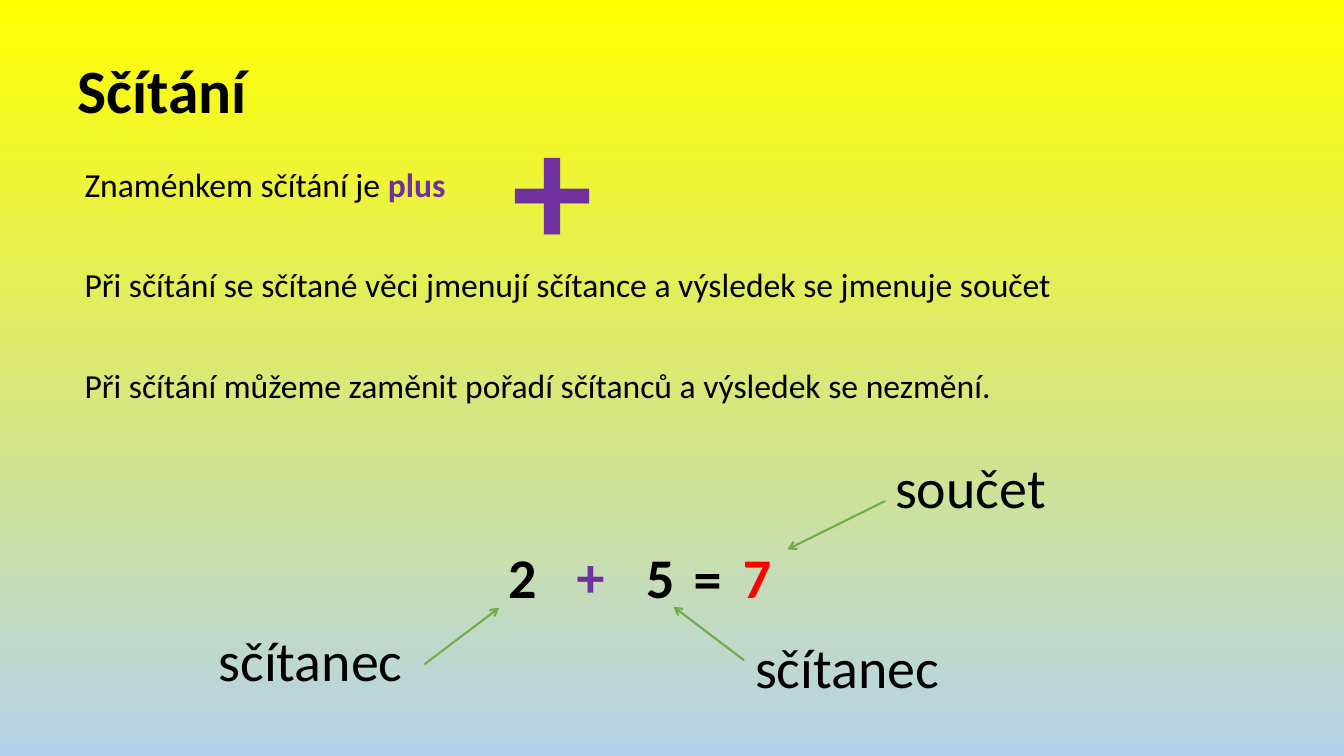
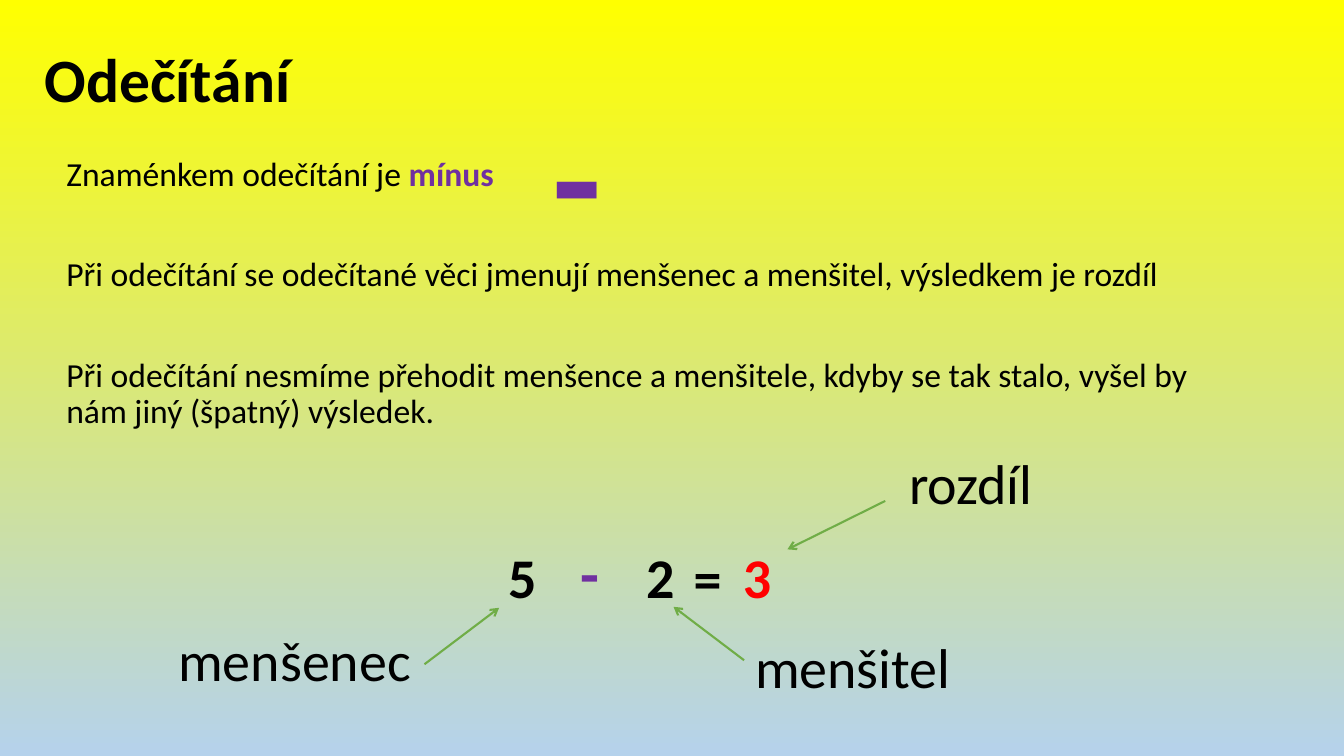
from dataclasses import dataclass

import pptx
import pptx.dml.color
import pptx.enum.shapes
import pptx.enum.text
import pptx.oxml
import pptx.oxml.ns
import pptx.slide
import pptx.text.text
import pptx.util

Inches = pptx.util.Inches
Pt = pptx.util.Pt

FONT = "Calibri"
COLORS = {
    "text": "000000",
    "sign": "7030A0",
    "result": "FF0000",
    "arrow": "70AD47",
    "sky_top": "FFFF00",
    "sky_bottom": "B5D2EC",
}


@dataclass(frozen=True)
class Label:
    text: str
    left: float
    top: float
    width: float = 0.59
    height: float = 0.77
    size: float = 40
    color: str = "text"
    bold: bool = False


@dataclass(frozen=True)
class Arrow:
    start: tuple[float, float]
    end: tuple[float, float]


@dataclass(frozen=True)
class Operation:
    title: str
    title_at: tuple[float, float]
    rules_at: tuple[float, float]
    rules_height: float
    sign_intro: str
    sign_name: str
    rules: tuple[str, ...]
    numbers: tuple[str, str, str]
    signs: tuple[Label, ...]
    terms: tuple[Label, ...]


# Arrows from each term to its number, the same for both operations
ARROWS = (
    Arrow((4.21, 6.59), (4.95, 6.03)),
    Arrow((7.38, 6.55), (6.68, 6.02)),
    Arrow((8.78, 4.97), (7.81, 5.45)),
)

OPERATIONS = (
    Operation(
        title="Sčítání",
        title_at=(0.67, 0.2),
        rules_at=(0.74, 1.62),
        rules_height=3.83,
        sign_intro="Znaménkem sčítání je ",
        sign_name="plus",
        rules=(
            "Při sčítání se sčítané věci jmenují sčítance a výsledek se jmenuje součet",
            "Při sčítání můžeme zaměnit pořadí sčítanců a výsledek se nezmění.",
        ),
        numbers=("2", "5", "7"),
        signs=(
            Label("+", 5.62, 5.32, color="sign", bold=True),
            Label("+", 4.98, 0.81, 1.69, 2.04, 115, "sign", True),
        ),
        terms=(
            Label("sčítanec", 2.07, 6.16, 2.14),
            Label("sčítanec", 7.39, 6.23, 2.14),
            Label("součet", 8.78, 4.44, 2.14),
        ),
    ),
    Operation(
        title="Odečítání",
        title_at=(0.34, 0.09),
        rules_at=(0.56, 1.51),
        rules_height=4.34,
        sign_intro="Znaménkem odečítání je ",
        sign_name="mínus",
        rules=(
            "Při odečítání se odečítané věci jmenují menšenec a menšitel, výsledkem je rozdíl",
            "Při odečítání nesmíme přehodit menšence a menšitele, kdyby se tak stalo, "
            "vyšel by nám jiný (špatný) výsledek.",
        ),
        numbers=("5", "2", "3"),
        signs=(
            Label("-", 5.66, 5.26, height=0.84, size=44, color="sign", bold=True),
            Label("-", 5.38, 0.7, 1.69, 2.04, 115, "sign", True),
        ),
        terms=(
            Label("menšenec", 1.67, 6.16, 2.54),
            Label("menšitel", 7.39, 6.23, 2.28),
            Label("rozdíl", 8.92, 4.4, 2.14),
        ),
    ),
)


def rgb(name: str) -> pptx.dml.color.RGBColor:
    return pptx.dml.color.RGBColor.from_string(COLORS[name])


def style(font: pptx.text.text.Font, size: float, color: str = "text", bold: bool = False) -> None:
    font.name = FONT
    font.size = Pt(size)
    font.bold = bold
    font.color.rgb = rgb(color)


def paint_background(master: pptx.slide.SlideMaster) -> None:
    sky = master.background.fill
    sky.gradient()
    sky.gradient_angle = 270
    for stop, name, position in zip(sky.gradient_stops, ("sky_top", "sky_bottom"), (0, 1)):
        stop.color.rgb = rgb(name)
        stop.position = position


def add_title(slide: pptx.slide.Slide, operation: Operation) -> None:
    title = slide.shapes.title
    title.left, title.top = map(Inches, operation.title_at)
    title.width, title.height = Inches(11.5), Inches(1.45)
    title.text_frame.text = operation.title
    title.text_frame.vertical_anchor = pptx.enum.text.MSO_ANCHOR.MIDDLE
    heading = title.text_frame.paragraphs[0]
    heading.alignment = pptx.enum.text.PP_ALIGN.LEFT
    heading.line_spacing = 0.9
    style(heading.font, 44, bold=True)


def add_rules(slide: pptx.slide.Slide, operation: Operation) -> None:
    left, top = operation.rules_at
    frame = slide.shapes.add_textbox(
        Inches(left), Inches(top), Inches(11.5), Inches(operation.rules_height)
    ).text_frame
    frame.word_wrap = True
    intro = frame.paragraphs[0]
    intro.line_spacing = 0.9
    intro.add_run().text = operation.sign_intro
    sign_name = intro.add_run()
    sign_name.text = operation.sign_name
    style(intro.font, 24)
    style(sign_name.font, 24, "sign", True)
    for rule in operation.rules:
        paragraph = frame.add_paragraph()
        paragraph.text = rule
        paragraph.line_spacing = 0.9
        paragraph.space_before = Pt(46)
        style(paragraph.font, 24)


def add_label(slide: pptx.slide.Slide, label: Label) -> None:
    frame = slide.shapes.add_textbox(
        Inches(label.left), Inches(label.top), Inches(label.width), Inches(label.height)
    ).text_frame
    frame.word_wrap = True
    frame.text = label.text
    style(frame.paragraphs[0].font, label.size, label.color, label.bold)


def add_arrow(slide: pptx.slide.Slide, arrow: Arrow) -> None:
    connector = slide.shapes.add_connector(
        pptx.enum.shapes.MSO_CONNECTOR.STRAIGHT, *map(Inches, arrow.start + arrow.end)
    )
    connector.line.color.rgb = rgb("arrow")
    connector.line.width = Pt(1.5)
    # Open arrowhead at the end, no shadow
    namespace = pptx.oxml.ns.nsdecls("a")
    connector.line._get_or_add_ln().append(
        pptx.oxml.parse_xml(f'<a:tailEnd {namespace} type="arrow"/>')
    )
    connector._element.spPr.append(pptx.oxml.parse_xml(f"<a:effectLst {namespace}/>"))


def add_equation(slide: pptx.slide.Slide, operation: Operation) -> None:
    first, second, result = operation.numbers
    equation = (
        Label(first, 4.94, 5.33, bold=True),
        Label(second, 6.31, 5.33, bold=True),
        Label("=", 6.78, 5.34, bold=True),
        Label(result, 7.27, 5.33, 0.55, color="result", bold=True),
    )
    for label in equation + operation.terms + operation.signs:
        add_label(slide, label)
    for arrow in ARROWS:
        add_arrow(slide, arrow)


def main() -> None:
    deck = pptx.Presentation()
    deck.slide_width, deck.slide_height = Inches(13.33), Inches(7.5)
    paint_background(deck.slide_master)
    title_only = deck.slide_layouts[5]
    for operation in OPERATIONS:
        slide = deck.slides.add_slide(title_only)
        add_title(slide, operation)
        add_rules(slide, operation)
        add_equation(slide, operation)
    deck.save("out.pptx")


if __name__ == "__main__":
    main()
